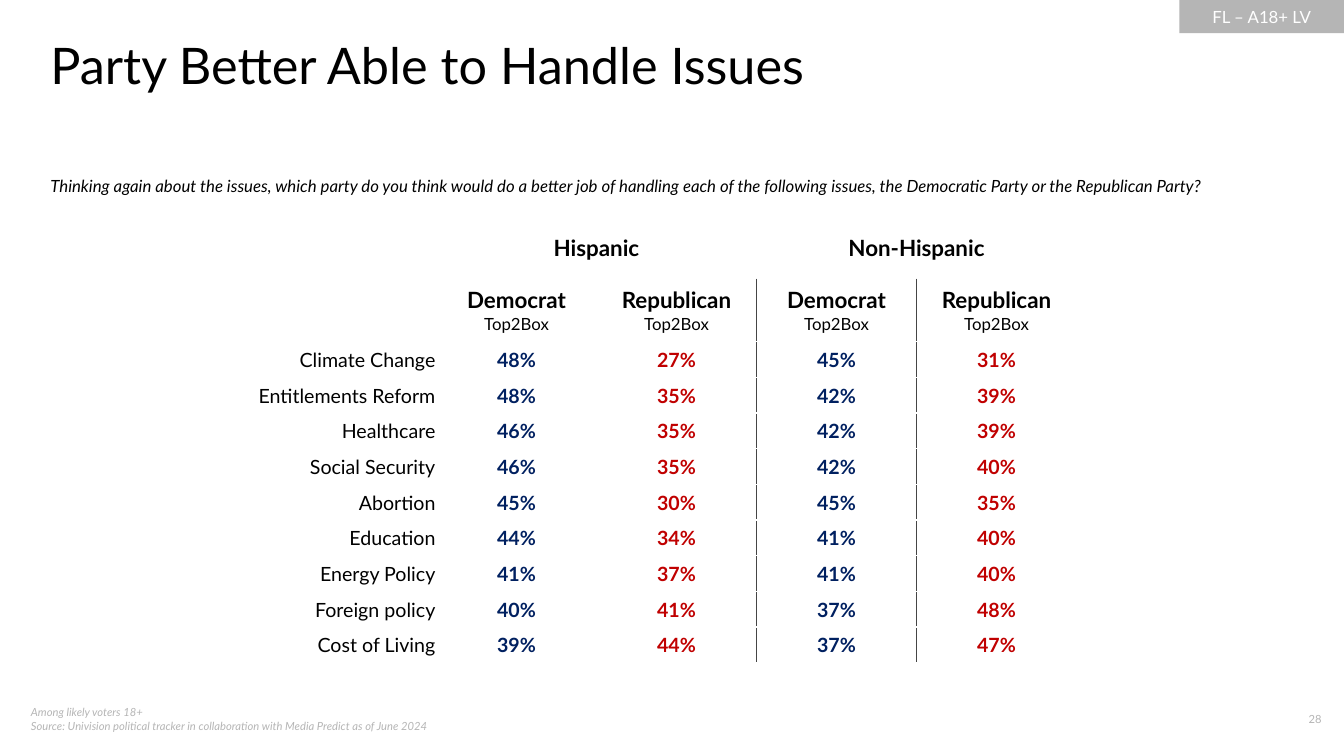
from pptx import Presentation
from pptx.dml.color import RGBColor as Rgb
from pptx.enum.shapes import MSO_SHAPE as Geo
from pptx.enum.text import MSO_ANCHOR as Anchor, MSO_AUTO_SIZE as Auto, PP_ALIGN as Align
from pptx.oxml.ns import qn
from pptx.util import Pt
from lxml.etree import SubElement as Sub

HUES = {"ink": "000000", "pale": "B5B5B5", "white": "FFFFFF",
        "dem": "002060", "rep": "C00000", "rule": "454545"}
SIDES = ("margin_left", "margin_top", "margin_right", "margin_bottom")
ISSUES = [
    ("Climate Change", 48, 27, 45, 31),
    ("Entitlements Reform", 48, 35, 42, 39),
    ("Healthcare", 46, 35, 42, 39),
    ("Social Security", 46, 35, 42, 40),
    ("Abortion", 45, 30, 45, 35),
    ("Education", 44, 34, 41, 40),
    ("Energy Policy", 41, 37, 41, 40),
    ("Foreign policy", 40, 41, 37, 48),
    ("Cost of Living", 39, 44, 37, 47),
]


class Deck:
    def __init__(self, font):
        self.font = font
        self.show = Presentation()
        self.show.slide_width, self.show.slide_height = Pt(960), Pt(540)
        self.slide = self.show.slides.add_slide(self.show.slide_layouts[5])

    def fill(self, para, runs, align=Align.LEFT, **base):
        """Fill a paragraph from (text, format) pairs laid over a base format."""
        para.alignment = align
        for text, extra in runs:
            run = para.add_run()
            run.text = text
            form = {"name": self.font, "size": 12, "hue": "ink", **base, **extra}
            run.font.color.rgb = Rgb.from_string(HUES[form.pop("hue")])
            form["size"] = Pt(form["size"])
            for key, val in form.items():
                setattr(run.font, key, val)

    def inset(self, item, *gaps):
        for side, gap in zip(SIDES, gaps):
            setattr(item, side, Pt(gap))

    def title(self, text, box, **form):
        item = self.slide.shapes.title
        item.left, item.top, item.width, item.height = map(Pt, box)
        frame = item.text_frame
        frame.auto_size, frame.vertical_anchor = Auto.NONE, Anchor.TOP
        self.inset(frame, 0, 0, 0, 0)
        frame.paragraphs[0].line_spacing = 1.0
        self.fill(frame.paragraphs[0], [(text, {})], **form)

    def text(self, lines, box, gaps=(7.2, 3.6, 7.2, 3.6), **form):
        frame = self.slide.shapes.add_textbox(*map(Pt, box)).text_frame
        frame.word_wrap = True
        self.inset(frame, *gaps)
        for num, line in enumerate(lines):
            para = frame.add_paragraph() if num else frame.paragraphs[0]
            self.fill(para, [(line, {})], **form)

    def tag(self, text, box, back, **form):
        item = self.slide.shapes.add_shape(Geo.RECTANGLE, *map(Pt, box))
        item.shadow.inherit = False
        item.fill.solid()
        item.fill.fore_color.rgb = Rgb.from_string(HUES[back])
        item.line.fill.background()
        item.text_frame.vertical_anchor = Anchor.MIDDLE
        self.fill(item.text_frame.paragraphs[0], [(text, {})], Align.CENTER, **form)

    def table(self, box, cols, rows):
        grid = self.slide.shapes.add_table(len(rows), len(cols), *map(Pt, box)).table
        grid.first_row = grid.horz_banding = False
        for col, wide in zip(grid.columns, cols):
            col.width = Pt(wide)
        for row, high in zip(grid.rows, rows):
            row.height = Pt(high)
        for cell in grid.iter_cells():
            cell.fill.background()
            cell.vertical_anchor = Anchor.MIDDLE
        return grid

    def edge(self, cell, side):
        """Draw the divider on side L or R of a cell."""
        props = cell._tc.get_or_add_tcPr()
        line = props.makeelement(qn(f"a:ln{side}"), {"w": str(Pt(1.5))})
        props.insert(0, line)
        Sub(Sub(line, qn("a:solidFill")), qn("a:srgbClr"), val=HUES["rule"])


def main():
    deck = Deck("Lato")
    deck.tag("FL – A18+ LV", (842.4, 0, 117.6, 23.76), "pale", hue="white")
    deck.text(["Among likely voters 18+",
               "Source: Univision political tracker in collaboration with Media Predict as of June 2024"],
              (15, 500.4, 368, 28.8), size=8, hue="pale", italic=True)
    deck.text(["28"], (888, 505.4, 63.2, 19.4), align=Align.RIGHT, size=8, hue="pale")
    deck.title("Party Better Able to Handle Issues", (36, 24, 864, 44), size=36)
    deck.text(["Thinking again about the issues, which party do you think would do a better job of "
               "handling each of the following issues, the Democratic Party or the Republican Party?"],
              (36, 125.3, 864, 28.8), gaps=(0, 0, 0, 0), italic=True)

    rows = [44.64] * 2 + [25.5] * len(ISSUES)
    cols = [144] + [114.3] * 4
    grid = deck.table((167.8, 154.8, sum(cols), sum(rows)), cols, rows)
    head = {"align": Align.CENTER, "size": 16, "bold": True}

    for col, group in ((1, "Hispanic"), (3, "Non-Hispanic")):
        cell = grid.cell(0, col)
        cell.merge(grid.cell(0, col + 1))
        deck.fill(cell.text_frame.paragraphs[0], [(group, {})], **head)
        for step, party in enumerate(("Democrat ", "Republican ")):
            runs = [(party, {}), ("Top2Box", {"size": 12, "bold": False})]
            deck.fill(grid.cell(1, col + step).text_frame.paragraphs[0], runs, **head)

    for row, (issue, *shares) in enumerate(ISSUES, 2):
        for col, text in enumerate([issue] + [f"{share}%" for share in shares]):
            cell = grid.cell(row, col)
            deck.inset(cell, 0.72, 0.72, 0.72, 0)
            form = {"align": Align.CENTER, "bold": True, "hue": "dem" if col % 2 else "rep"}
            if col == 0:
                form = {"align": Align.RIGHT}
            deck.fill(cell.text_frame.paragraphs[0], [(text, {})], size=14, **form)

    for row in range(1, len(rows)):
        deck.edge(grid.cell(row, 2), "R")
        deck.edge(grid.cell(row, 3), "L")
    deck.show.save("out.pptx")


if __name__ == "__main__":
    main()
